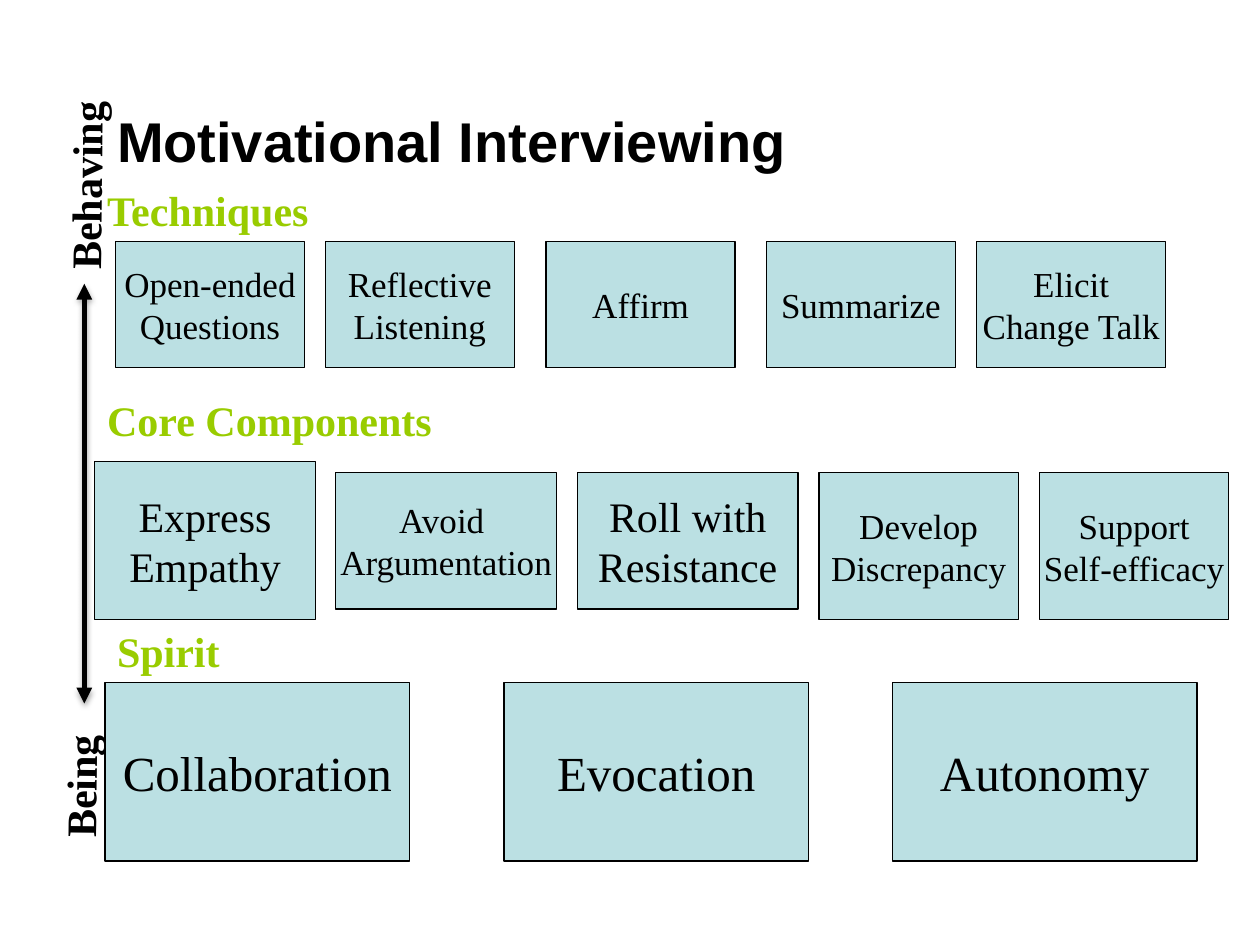
from dataclasses import dataclass

from lxml.etree import fromstring
from pptx import Presentation
from pptx.dml.color import RGBColor
from pptx.enum.shapes import MSO_CONNECTOR, MSO_SHAPE
from pptx.enum.text import MSO_ANCHOR, PP_ALIGN
from pptx.oxml.ns import nsdecls, qn
from pptx.util import Cm, Pt


@dataclass(frozen=True)
class Theme:
    ink: RGBColor = RGBColor(0x00, 0x00, 0x00)
    lime: RGBColor = RGBColor(0x99, 0xCC, 0x00)
    pale: RGBColor = RGBColor(0xBB, 0xE0, 0xE3)
    sans: str = "Arial"
    serif: str = "Times New Roman"
    title: int = 32
    large: int = 28
    head: int = 24
    small: int = 20


theme = Theme()


def add_run(para, text, size, color=theme.ink, bold=False, face=theme.serif):
    run = para.add_run()
    run.text = text
    font = run.font
    font.name, font.size, font.bold = face, Pt(size), bold
    font.color.rgb = color


def add_text(left, top, width, height, wrap=True):
    """Add a text box and return its frame."""
    box = slide.shapes.add_textbox(Cm(left), Cm(top), Cm(width), Cm(height))
    box.text_frame.word_wrap = wrap
    return box.text_frame


deck = Presentation()
deck.slide_width, deck.slide_height = Cm(25.4), Cm(19.05)
slide = deck.slides.add_slide(deck.slide_layouts[6])

# Title
frame = add_text(2.11, 1.9, 21.59, 2.12)
frame.margin_top = Cm(0.25)
add_run(frame.paragraphs[0], "Motivational Interviewing", theme.title,
        bold=True, face=theme.sans)

# Upright axis words, set apart by a tab stop
axis = slide.shapes.add_textbox(Cm(-6.27), Cm(8.56), Cm(15.88), Cm(1.27))
axis.rotation = 270.5
axis.text_frame.word_wrap = True
para = axis.text_frame.paragraphs[0]
para._p.get_or_add_pPr().append(fromstring(
    f'<a:tabLst {nsdecls("a")}><a:tab pos="{Cm(11.45)}" algn="l"/></a:tabLst>'))
add_run(para, "Being\tBehaving", theme.head, bold=True)

# Axis arrow with a soft shadow
arrow = slide.shapes.add_connector(
    MSO_CONNECTOR.STRAIGHT, Cm(1.7), Cm(14.18), Cm(1.7), Cm(5.72))
arrow.line.color.rgb = theme.ink
arrow.line.width = Pt(3)
stroke = arrow.line._get_or_add_ln()
for end in ("headEnd", "tailEnd"):
    stroke.append(fromstring(f'<a:{end} {nsdecls("a")} type="triangle"/>'))
props = arrow._element.find(qn("p:spPr"))
props.append(fromstring(
    f'<a:effectLst {nsdecls("a")}>'
    f'<a:outerShdw blurRad="{Pt(3.1)}" dist="{Pt(1.8)}" dir="5400000" rotWithShape="0">'
    '<a:srgbClr val="000000"><a:alpha val="35000"/></a:srgbClr>'
    '</a:outerShdw></a:effectLst>'))

# Row headings: text, left, top, width
heads = [
    ("Techniques", 1.91, 3.6, 4.65),
    ("Core Components", 1.91, 7.83, 7.09),
    ("Spirit", 2.11, 12.49, 2.59),
]
for text, left, top, width in heads:
    frame = add_text(left, top, width, 1.27, wrap=False)
    add_run(frame.paragraphs[0], text, theme.head, theme.lime, bold=True)

# Boxes: lines, left, top, width, height, type size
tech = [
    ("Open-ended\nQuestions", 2.33),
    ("Reflective\nListening", 6.56),
    ("Affirm", 11.01),
    ("Summarize", 15.45),
    ("Elicit\nChange Talk", 19.69),
]
core = [
    ("Express\nEmpathy", 1.91, 9.31, 4.45, 3.18, theme.head),
    ("Avoid \nArgumentation", 6.77, 9.53, 4.45, 2.75, theme.small),
    ("Roll with\nResistance", 11.64, 9.53, 4.45, 2.75, theme.head),
    ("Develop\nDiscrepancy", 16.51, 9.53, 4.02, 2.96, theme.small),
    ("Support\nSelf-efficacy", 20.96, 9.53, 3.81, 2.96, theme.small),
]
spirit = [("Collaboration", 2.12), ("Evocation", 10.16), ("Autonomy", 17.99)]

boxes = [(text, left, 4.87, 3.81, 2.54, theme.small) for text, left in tech]
boxes += core
boxes += [(text, left, 13.76, 6.14, 3.6, theme.large) for text, left in spirit]

for text, left, top, width, height, size in boxes:
    box = slide.shapes.add_shape(
        MSO_SHAPE.RECTANGLE, Cm(left), Cm(top), Cm(width), Cm(height))
    box.shadow.inherit = False
    box.fill.solid()
    box.fill.fore_color.rgb = theme.pale
    box.line.color.rgb = theme.ink
    box.line.width = Pt(0.75)
    frame = box.text_frame
    frame.word_wrap = False
    frame.vertical_anchor = MSO_ANCHOR.MIDDLE
    for row, line in enumerate(text.split("\n")):
        para = frame.add_paragraph() if row else frame.paragraphs[0]
        para.alignment = PP_ALIGN.CENTER
        add_run(para, line, size)

deck.save("out.pptx")
